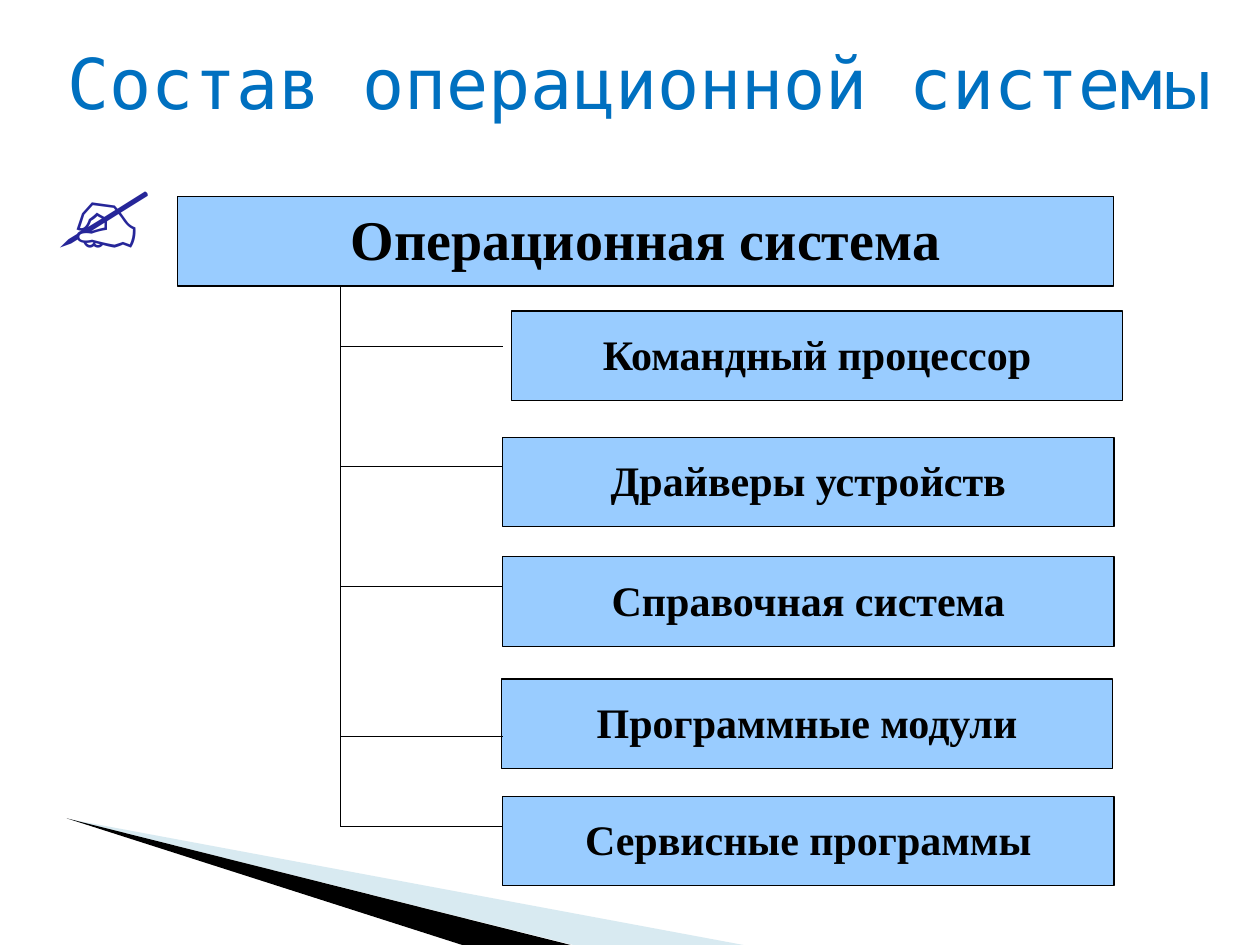
from dataclasses import dataclass

from lxml.etree import SubElement
from pptx import Presentation
from pptx.dml.color import RGBColor
from pptx.enum.shapes import MSO_CONNECTOR, MSO_SHAPE
from pptx.enum.text import MSO_ANCHOR, PP_ALIGN
from pptx.oxml.ns import qn
from pptx.util import Inches, Pt

WIDTH, HEIGHT = Inches(10), Inches(7.5)
TRUNK_X, BRANCH_END = 27, 39.9
BOX_HEIGHT = 9.47
COMPONENTS = [
    ("Командный процессор", 40.6, 32.93, 36.67),
    ("Драйверы устройств", 39.9, 46.27, 49.33),
    ("Справочная система", 39.9, 58.93, 62.07),
    ("Программные модули", 39.8, 71.87, 77.93),
    ("Сервисные программы", 39.9, 84.27, 87.47),
]


@dataclass(frozen=True)
class Theme:
    """Colours, fonts and type sizes of the slide."""

    title: str = "0070C0"
    pen: str = "262699"
    box: str = "99CCFF"
    ink: str = "000000"
    pale: str = "9FCBDC"
    mono: str = "DejaVu Sans Mono"
    sans: str = "Arial"
    serif: str = "Times New Roman"
    title_size: int = 40
    system_size: int = 32
    component_size: int = 24
    pen_size: int = 60
    line_width: float = 0.75


THEME = Theme()


def across(percent):
    """Return a percentage of the slide width."""
    return round(WIDTH * percent / 100)


def down(percent):
    """Return a percentage of the slide height."""
    return round(HEIGHT * percent / 100)


def place(left, top, width, height):
    """Turn a box in percentages into slide lengths."""
    return across(left), down(top), across(width), down(height)


def write(shape, text, *, size, color, font=THEME.serif, bold=False,
          align=PP_ALIGN.CENTER, spacing=0.98):
    """Append formatted text to the first paragraph of a shape."""
    paragraph = shape.text_frame.paragraphs[0]
    paragraph.alignment = align
    paragraph.line_spacing = spacing
    run = paragraph.add_run()
    run.text = text
    run.font.size = Pt(size)
    run.font.name = font
    run.font.bold = bold
    run.font.color.rgb = RGBColor.from_string(color)


def set_margins(frame):
    """Apply the narrow insets shared by the title and the boxes."""
    frame.word_wrap = True
    frame.margin_left = frame.margin_right = Inches(0.09)
    frame.margin_top = frame.margin_bottom = Inches(0.04)


def add_wedge(slide, corners, color, opacity=100):
    """Draw a filled decorative wedge through the corners."""
    start, *others = [(across(x), down(y)) for x, y in corners]
    builder = slide.shapes.build_freeform(*start)
    builder.add_line_segments(others)
    wedge = builder.convert_to_shape()
    wedge.shadow.inherit = False
    wedge.line.fill.background()
    wedge.fill.solid()
    wedge.fill.fore_color.rgb = RGBColor.from_string(color)
    tint = wedge._element.spPr.find(f".//{qn('a:srgbClr')}")
    SubElement(tint, qn("a:alpha"), val=str(opacity * 1000))


def add_box(diagram, text, left, top, width, size):
    """Add a labelled box to the diagram."""
    box = diagram.shapes.add_shape(
        MSO_SHAPE.ROUNDED_RECTANGLE, *place(left, top, width, BOX_HEIGHT))
    box.adjustments[0] = 0
    box.shadow.inherit = False
    box.fill.solid()
    box.fill.fore_color.rgb = RGBColor.from_string(THEME.box)
    box.line.color.rgb = RGBColor.from_string(THEME.ink)
    box.line.width = Pt(THEME.line_width)
    set_margins(box.text_frame)
    box.text_frame.vertical_anchor = MSO_ANCHOR.MIDDLE
    write(box, text, size=size, color=THEME.ink, bold=True)


def add_line(diagram, x1, y1, x2, y2):
    """Join two points of the diagram."""
    line = diagram.shapes.add_connector(
        MSO_CONNECTOR.STRAIGHT, across(x1), down(y1), across(x2), down(y2))
    line.line.color.rgb = RGBColor.from_string(THEME.ink)
    line.line.width = Pt(THEME.line_width)
    SubElement(line._element.spPr, qn("a:effectLst"))


def add_title(slide):
    """Add the slide title."""
    title = slide.shapes.add_textbox(*place(3.9, 4.13, 93.8, 15.33))
    set_margins(title.text_frame)
    style = {"size": THEME.title_size, "color": THEME.title}
    write(title, "Состав операционной систем", font=THEME.mono, **style)
    write(title, "ы", font=THEME.sans, **style)


def add_pen(slide):
    """Add the writing hand beside the diagram."""
    pen = slide.shapes.add_textbox(*place(3.5, 14.27, 9.7, 14.8))
    pen.text_frame.word_wrap = False
    write(pen, "✍", size=THEME.pen_size, color=THEME.pen, bold=True,
          align=PP_ALIGN.LEFT, spacing=1.0)


def add_diagram(slide):
    """Draw the system with its components branching off a trunk."""
    diagram = slide.shapes.add_group_shape()
    add_box(diagram, "Операционная система", 14.1, 20.8, 74.3,
            THEME.system_size)
    for name, left, top, _ in COMPONENTS:
        add_box(diagram, name, left, top, 48.5, THEME.component_size)
    add_line(diagram, TRUNK_X, 30.4, TRUNK_X, COMPONENTS[-1][-1])
    for *_, branch in COMPONENTS:
        add_line(diagram, TRUNK_X, branch, BRANCH_END, branch)


def main():
    """Build and save the slide."""
    deck = Presentation()
    deck.slide_width, deck.slide_height = WIDTH, HEIGHT
    slide = deck.slides.add_slide(deck.slide_layouts[6])
    add_wedge(slide, [(5.5, 86.7), (59, 100), (45.5, 100)], THEME.pale, 40)
    add_wedge(slide, [(5.3, 86.6), (45.3, 100), (36.7, 100)], THEME.ink)
    add_title(slide)
    add_diagram(slide)
    add_pen(slide)
    deck.save("out.pptx")


if __name__ == "__main__":
    main()
